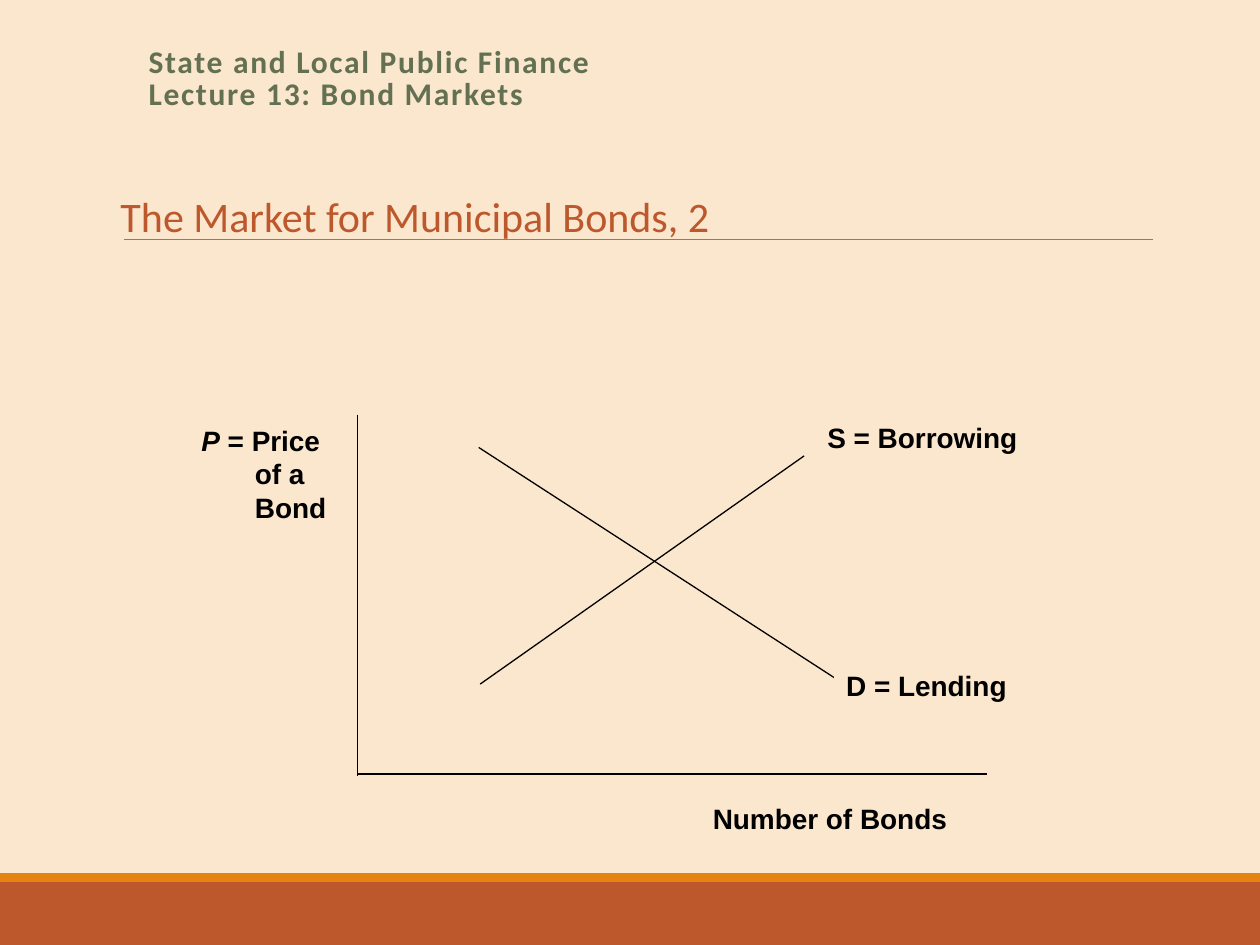
from lxml import etree
from pptx import Presentation
from pptx.dml.color import RGBColor
from pptx.enum.shapes import MSO_CONNECTOR, MSO_SHAPE
from pptx.enum.text import MSO_ANCHOR, MSO_AUTO_SIZE, PP_ALIGN
from pptx.oxml.ns import qn
from pptx.util import Cm, Pt

STRAIGHT = MSO_CONNECTOR.STRAIGHT
RECTANGLE = MSO_SHAPE.RECTANGLE
LEFT = PP_ALIGN.LEFT
TOP = MSO_ANCHOR.TOP
FIT_SHAPE = MSO_AUTO_SIZE.SHAPE_TO_FIT_TEXT
NO_FIT = MSO_AUTO_SIZE.NONE
TITLE_ONLY = 5

CREAM, RUST, ORANGE = "FBE6CE", "BD582C", "E48312"
GREEN, GRAY, BLACK = "637052", "808080", "000000"


def color(hex_code):
    return RGBColor.from_string(hex_code)


def style(para, size, hex_code, name="Arial", bold=True):
    para.alignment = LEFT
    font = para.font
    font.name, font.size, font.bold = name, Pt(size), bold
    font.color.rgb = color(hex_code)


def add_rect(page, left, top, width, height, fill):
    rect = page.shapes.add_shape(RECTANGLE, Cm(left), Cm(top), Cm(width), Cm(height))
    rect.shadow.inherit = False
    rect.fill.solid()
    rect.fill.fore_color.rgb = color(fill)
    rect.line.fill.background()
    return rect


def add_line(page, x1, y1, x2, y2, hex_code=BLACK, weight=0.75):
    line = page.shapes.add_connector(STRAIGHT, Cm(x1), Cm(y1), Cm(x2), Cm(y2))
    line.line.color.rgb = color(hex_code)
    line.line.width = Pt(weight)
    etree.SubElement(line._element.spPr, qn("a:effectLst"))


def add_label(page, text, left, top, width, height):
    """Bold label on a background-coloured box that hides lines beneath it."""
    frame = add_rect(page, left, top, width, height, CREAM).text_frame
    frame.word_wrap = True
    frame.vertical_anchor = TOP
    frame.text = text
    style(frame.paragraphs[0], 16, BLACK)


def add_price_label(page):
    frame = page.shapes.add_textbox(Cm(4.06), Cm(8.41), Cm(2.69), Cm(2.69)).text_frame
    frame.word_wrap = True
    frame.margin_left = frame.margin_right = 0
    first = frame.paragraphs[0]
    symbol = first.add_run()
    symbol.text = "P"
    symbol.font.italic = True
    first.add_run().text = " = Price"
    style(first, 16, BLACK)
    for word in ("of a", "Bond"):
        para = frame.add_paragraph()
        para.text = word
        style(para, 16, BLACK)
        para._p.pPr.set("marL", str(Cm(1.08)))


def fill_title(page):
    title = page.shapes.title
    title.left, title.top, title.width, title.height = Cm(2.74), Cm(0.84), Cm(20.96), Cm(1.65)
    frame = title.text_frame
    frame.auto_size = NO_FIT
    frame.vertical_anchor = TOP
    frame.text = "State and Local Public Finance\vLecture 13: Bond Markets"
    para = frame.paragraphs[0]
    para.line_spacing = 0.85
    style(para, 18, GREEN, "Calibri")
    para._p.pPr.find(qn("a:defRPr")).set("spc", "100")


def add_heading(page, text):
    frame = page.shapes.add_textbox(Cm(2.18), Cm(3.71), Cm(12.62), Cm(1.27)).text_frame
    frame.word_wrap = False
    frame.auto_size = FIT_SHAPE
    frame.text = text
    style(frame.paragraphs[0], 24, RUST, "Calibri", bold=False)


def add_market_diagram(page):
    add_line(page, 7.21, 8.36, 7.21, 15.65)    # price axis
    add_line(page, 7.21, 15.6, 19.89, 15.6)    # quantity axis
    add_line(page, 9.65, 9.02, 16.94, 13.74)   # demand
    add_label(page, "D = Lending", 16.81, 13.36, 4.6, 1.52)
    add_label(page, "Number of Bonds", 14.12, 16.03, 6.53, 1.14)
    add_price_label(page)
    add_line(page, 9.68, 13.79, 16.21, 9.19)   # supply
    add_label(page, "S = Borrowing", 16.43, 8.36, 4.6, 1.52)


def main():
    deck = Presentation()
    deck.slide_width, deck.slide_height = Cm(25.4), Cm(19.05)
    page = deck.slides.add_slide(deck.slide_layouts[TITLE_ONLY])
    page.background.fill.solid()
    page.background.fill.fore_color.rgb = color(CREAM)

    add_rect(page, 0, 17.78, 25.4, 1.27, RUST)
    add_rect(page, 0, 17.6, 25.4, 0.18, ORANGE)
    add_line(page, 2.49, 4.83, 23.24, 4.83, GRAY, 0.5)
    add_market_diagram(page)
    fill_title(page)
    add_heading(page, "The Market for Municipal Bonds, 2")
    deck.save("out.pptx")


if __name__ == "__main__":
    main()
